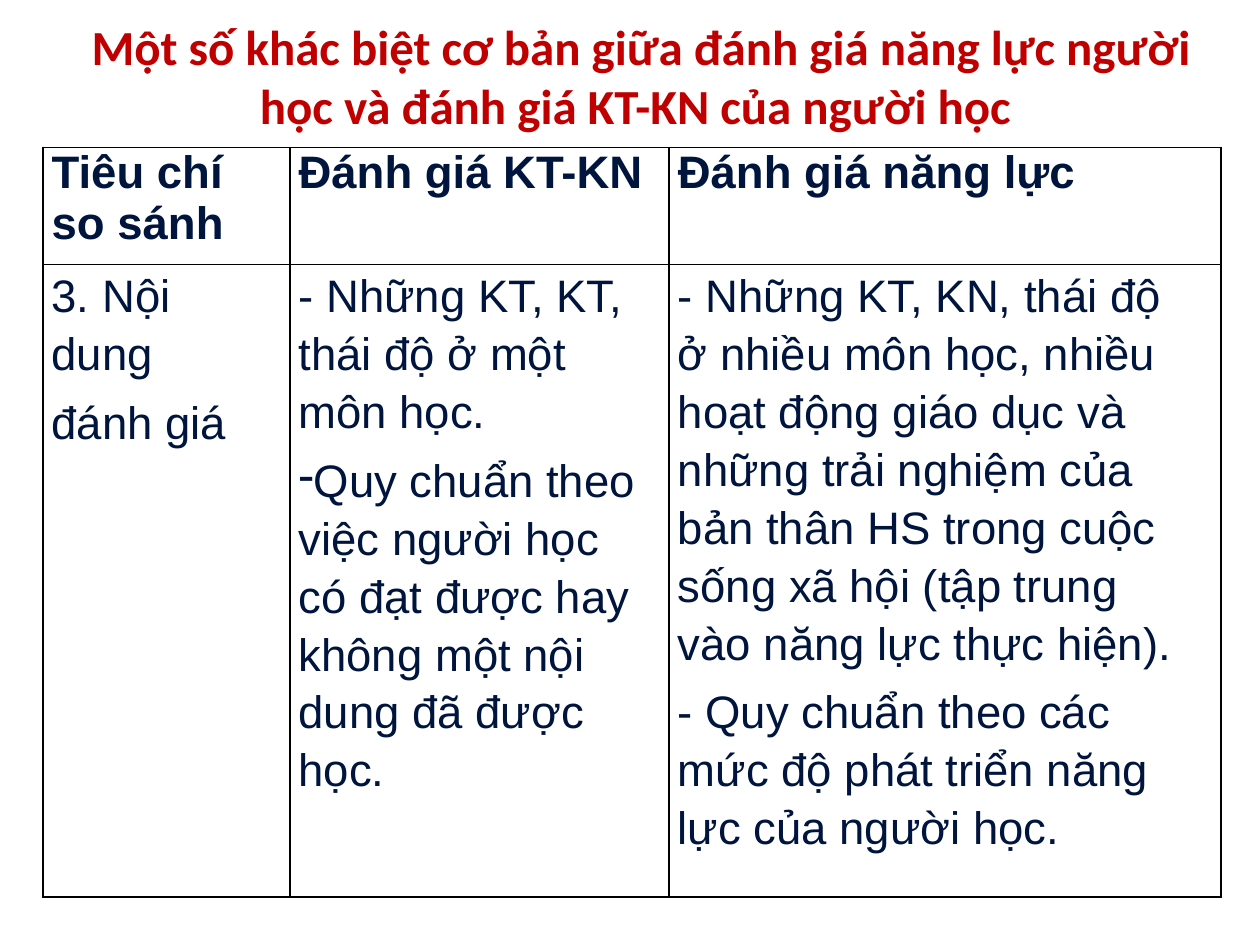
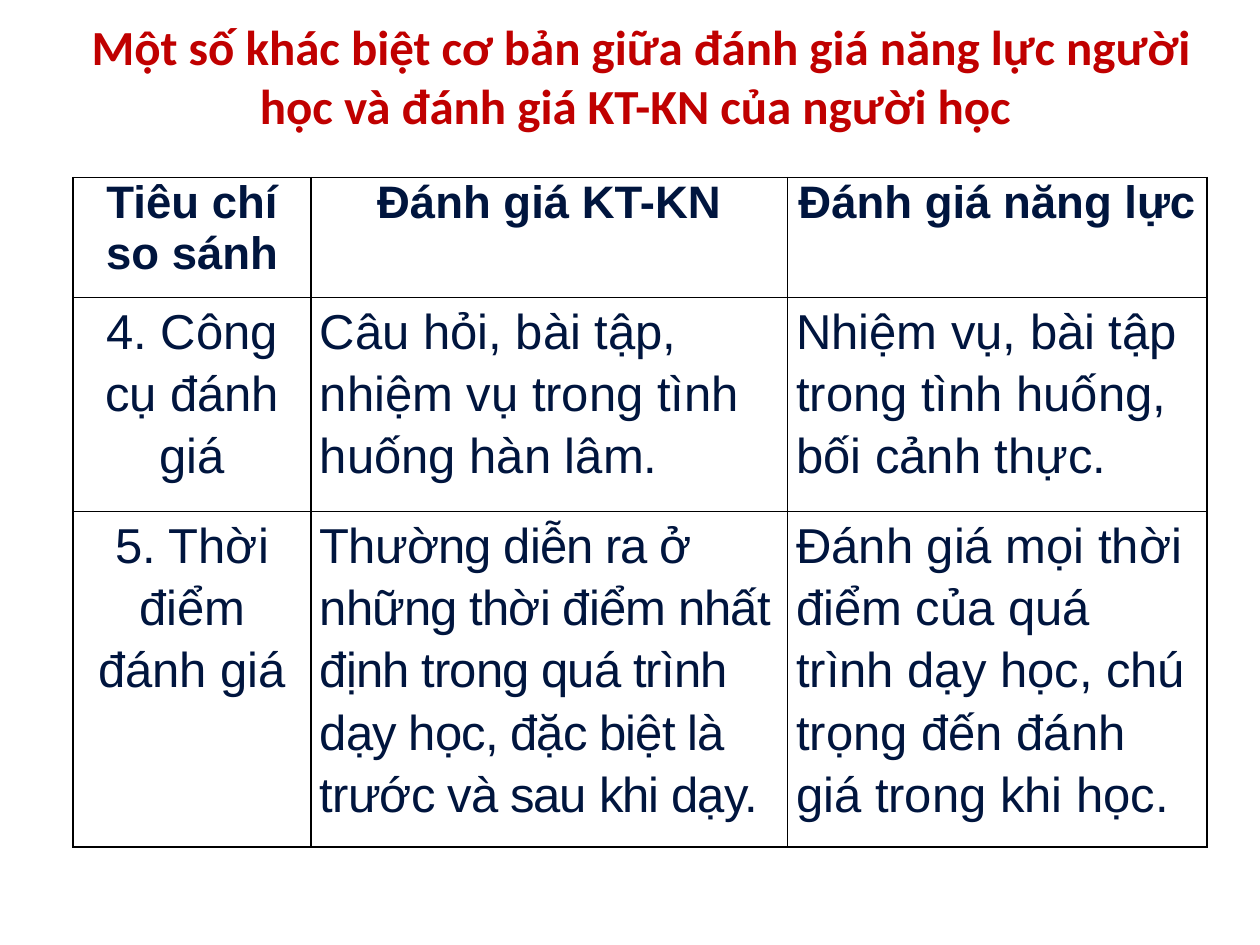
from dataclasses import dataclass

from lxml.etree import SubElement
from pptx import Presentation
from pptx.dml.color import RGBColor
from pptx.enum.text import MSO_ANCHOR, MSO_AUTO_SIZE, PP_ALIGN
from pptx.oxml.ns import qn
from pptx.util import Inches, Pt

TITLE = "Một số khác biệt cơ bản giữa đánh giá năng lực người học và đánh giá KT-KN của người học "
HEADER = [["Tiêu chí", "so sánh"], ["Đánh giá KT-KN"], ["Đánh giá năng lực"]]
DASH = "•"  # marks a paragraph that gets an automatic dash bullet

COMPARISONS = [
    {
        "left": 0.34, "top": 1.17,
        "columns": [1.96, 3.01, 4.38],
        "rows": [0.93, 5.02],
        "body_size": 26,
        "centred": False,
        "tight_cells": [],
        "body": [
            [
                ["3. Nội dung", "đánh giá"],
                ["- Những KT, KT, thái độ ở một môn học.",
                 DASH + "Quy chuẩn theo việc người học có đạt được hay không "
                 "một nội dung đã được học."],
                ["- Những KT, KN, thái độ\vở nhiều môn học, nhiều hoạt động giáo dục và "
                 "những trải nghiệm của bản thân HS trong cuộc sống xã hội "
                 "(tập trung\vvào năng lực thực hiện).",
                 "- Quy chuẩn theo các mức độ phát triển năng lực của người học."],
            ],
        ],
    },
    {
        "left": 0.58, "top": 1.41,
        "columns": [1.89, 3.78, 3.33],
        "rows": [0.95, 1.7, 2.66],
        "body_size": 28,
        "centred": True,
        "tight_cells": [(2, 1)],
        "body": [
            [
                ["4. Công cụ đánh giá"],
                ["Câu hỏi, bài tập, nhiệm vụ trong tình huống hàn lâm."],
                ["Nhiệm vụ, bài tập trong tình huống, bối cảnh thực."],
            ],
            [
                ["5. Thời điểm đánh giá"],
                ["Thường diễn ra ở những thời điểm nhất định trong quá trình dạy học, "
                 "đặc biệt là trước và sau khi dạy."],
                ["Đánh giá mọi thời điểm của quá trình dạy học, "
                 "chú trọng đến đánh giá trong khi học."],
            ],
        ],
    },
]


@dataclass(frozen=True)
class Theme:
    title_font: str = "Calibri"
    table_font: str = "Arial"
    title_color: RGBColor = RGBColor(0xC0, 0x00, 0x00)
    text_color: RGBColor = RGBColor(0x00, 0x15, 0x3E)
    border_color: str = "000000"
    title_size: int = 28
    header_size: int = 26
    border_width: int = 1
    body_line_spacing: float = 1.14
    body_space_before: int = 6


THEME = Theme()


def format_runs(paragraph, font_name, size, color, bold):
    for run in paragraph.runs:
        run.font.name = font_name
        run.font.size = Pt(size)
        run.font.color.rgb = color
        run.font.bold = bold


def add_title(slide):
    title = slide.shapes.title
    title.left, title.top = Inches(0.42), Inches(0.08)
    title.width, title.height = Inches(9.33), Inches(1.04)
    frame = title.text_frame
    frame.text = TITLE
    frame.word_wrap = True
    frame.auto_size = MSO_AUTO_SIZE.SHAPE_TO_FIT_TEXT
    frame.vertical_anchor = MSO_ANCHOR.TOP
    paragraph = frame.paragraphs[0]
    paragraph.alignment = PP_ALIGN.CENTER
    format_runs(paragraph, THEME.title_font, THEME.title_size, THEME.title_color, True)


def add_borders(cell):
    properties = cell._tc.get_or_add_tcPr()
    for side in ("L", "R", "T", "B"):
        line = SubElement(properties, qn(f"a:ln{side}"), w=str(Pt(THEME.border_width)))
        fill = SubElement(line, qn("a:solidFill"))
        SubElement(fill, qn("a:srgbClr"), val=THEME.border_color)


def add_dash_bullet(paragraph):
    properties = paragraph._p.get_or_add_pPr()
    properties.set("marL", "0")
    properties.set("indent", "0")
    SubElement(properties, qn("a:buChar"), char="-")


def fill_cell(cell, texts, is_header, size, alignment, tight):
    add_borders(cell)
    cell.fill.background()
    cell.margin_left = cell.margin_right = Inches(0.07)
    cell.margin_top = cell.margin_bottom = 0
    frame = cell.text_frame
    for index, text in enumerate(texts):
        paragraph = frame.add_paragraph() if index else frame.paragraphs[0]
        paragraph.text = text.removeprefix(DASH)
        paragraph.alignment = alignment
        if not is_header:
            paragraph.line_spacing = THEME.body_line_spacing
            paragraph.space_before = Pt(THEME.body_space_before)
        if text.startswith(DASH):
            add_dash_bullet(paragraph)
        format_runs(paragraph, THEME.table_font, size, THEME.text_color, is_header)
        if tight:
            for run in paragraph.runs:
                run.font._element.set("spc", "-50")


def add_comparison(slide, comparison):
    columns, rows = comparison["columns"], comparison["rows"]
    table = slide.shapes.add_table(
        len(rows), len(columns),
        Inches(comparison["left"]), Inches(comparison["top"]),
        Inches(sum(columns)), Inches(sum(rows)),
    ).table
    table.first_row = table.horz_banding = False
    for column, width in zip(table.columns, columns):
        column.width = Inches(width)
    for row, height in zip(table.rows, rows):
        row.height = Inches(height)

    for row_index, row_texts in enumerate([HEADER, *comparison["body"]]):
        is_header = row_index == 0
        size = THEME.header_size if is_header else comparison["body_size"]
        for column_index, texts in enumerate(row_texts):
            centred = comparison["centred"] and (is_header or column_index == 0)
            fill_cell(
                table.cell(row_index, column_index), texts, is_header, size,
                PP_ALIGN.CENTER if centred else PP_ALIGN.LEFT,
                (row_index, column_index) in comparison["tight_cells"],
            )


def main():
    presentation = Presentation()
    presentation.slide_width, presentation.slide_height = Inches(10), Inches(7.5)
    title_only = presentation.slide_layouts.get_by_name("Title Only")
    for comparison in COMPARISONS:
        slide = presentation.slides.add_slide(title_only)
        add_title(slide)
        add_comparison(slide, comparison)
    presentation.save("out.pptx")


if __name__ == "__main__":
    main()
